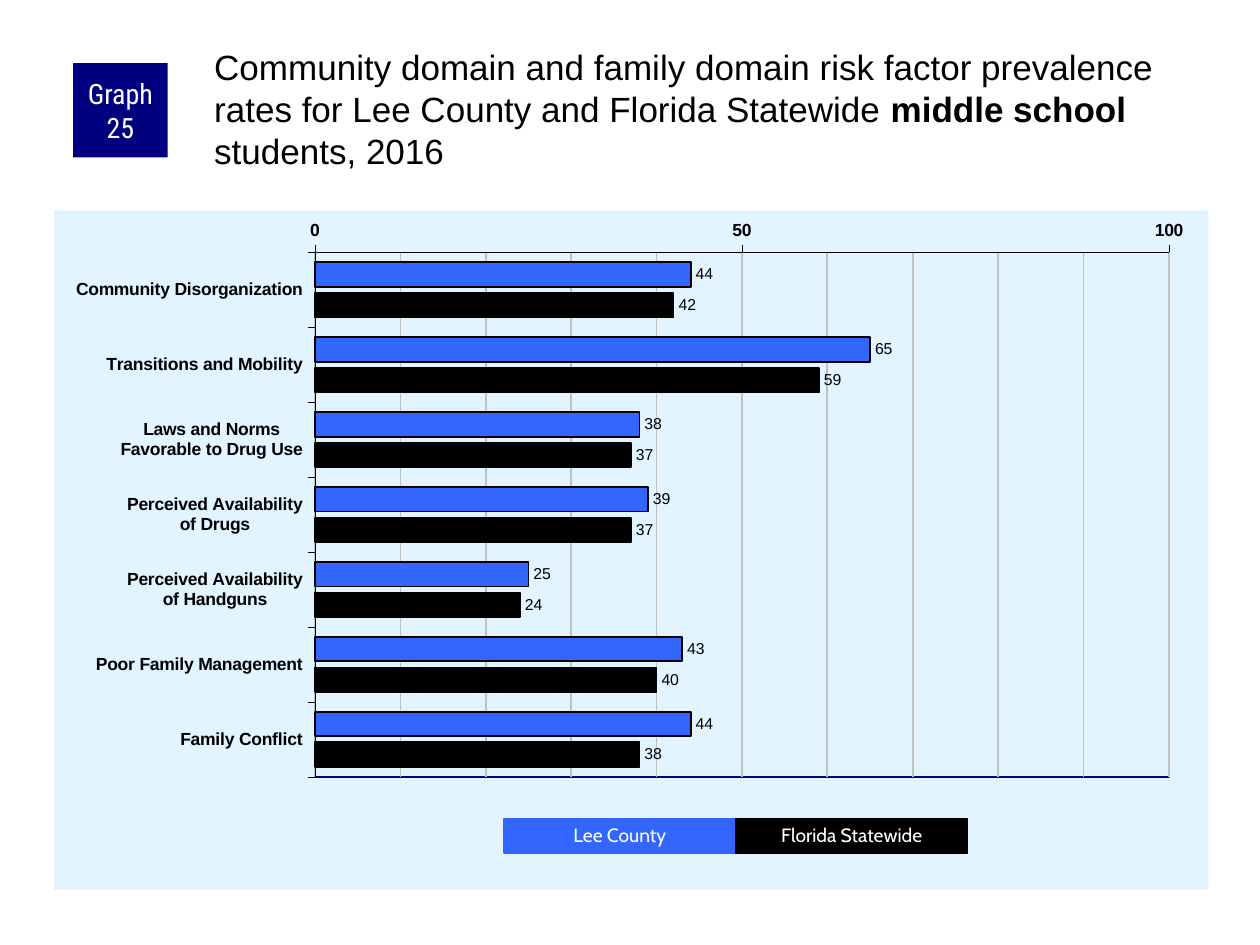
from dataclasses import dataclass

from lxml import etree
from pptx import Presentation
from pptx import util as u
from pptx.chart.data import CategoryChartData
from pptx.dml.color import RGBColor
from pptx.enum import chart as ec, shapes, text
from pptx.oxml import parse_xml
from pptx.oxml.ns import nsdecls, qn

COLORS = {"navy": "000080", "blue": "3366FF", "black": "000000",
          "white": "FFFFFF", "grid": "C0C0C0", "panel": "E1F4FF"}
CATEGORIES = ["Community Disorganization", "Transitions and Mobility",
              "Laws and Norms\nFavorable to Drug Use",
              "Perceived Availability\nof Drugs",
              "Perceived Availability\nof Handguns",
              "Poor Family Management", "Family Conflict"]
PLOT = {"x": 0.226, "y": 0.062, "w": 0.74, "h": 0.772}


@dataclass
class Region:
    name: str
    color: str
    rates: list[int]


REGIONS = [Region("Lee County", "blue", [44, 65, 38, 39, 25, 43, 44]),
           Region("Florida Statewide", "black", [42, 59, 37, 37, 24, 40, 38])]


def rgb(name: str) -> RGBColor:
    return RGBColor.from_string(COLORS[name])


def style_font(font, size: float, color: str = "black", face: str = "Arial",
               bold: bool = False) -> None:
    font.name, font.size, font.bold = face, u.Pt(size), bold
    font.color.rgb = rgb(color)


def add_run(p, content: str, **fmt) -> None:
    r = p.add_run()
    r.text = content
    style_font(r.font, **fmt)


def set_insets(tf, left: float, top: float, right: float, bottom: float) -> None:
    tf.margin_left, tf.margin_top = u.Inches(left), u.Inches(top)
    tf.margin_right, tf.margin_bottom = u.Inches(right), u.Inches(bottom)


def add_box(s, box: tuple, fill: str, content: str, line: bool = False,
            spacing: float = 1.0, insets: tuple = (0.1, 0.05, 0.1, 0.05), **fmt) -> None:
    sp = s.shapes.add_shape(shapes.MSO_SHAPE.RECTANGLE, *map(u.Inches, box))
    sp.shadow.inherit = False
    sp.fill.solid()
    sp.fill.fore_color.rgb = rgb(fill)
    if line:
        sp.line.color.rgb = rgb(fill)
        sp.line.width = u.Pt(0.75)
    else:
        sp.line.fill.background()
    tf = sp.text_frame
    tf.word_wrap = True
    tf.vertical_anchor = text.MSO_ANCHOR.MIDDLE
    set_insets(tf, *insets)
    p = tf.paragraphs[0]
    p.alignment = text.PP_ALIGN.CENTER
    p.line_spacing = spacing
    add_run(p, content, color="white", **fmt)


def add_title(s) -> None:
    sp = s.shapes.title
    sp.left, sp.top, sp.width, sp.height = map(u.Inches, (1.67, 0.33, 7.92, 0.83))
    tf = sp.text_frame
    tf.word_wrap = True
    tf.auto_size = text.MSO_AUTO_SIZE.NONE
    tf.vertical_anchor = text.MSO_ANCHOR.TOP
    set_insets(tf, 0.03, 0.03, 0, 0)
    p = tf.paragraphs[0]
    p.alignment = text.PP_ALIGN.LEFT
    add_run(p, "Community domain and family domain risk factor prevalence "
               "rates for Lee County and Florida Statewide ", size=20)
    add_run(p, "middle school", size=20, bold=True)
    add_run(p, " students, 2016", size=20)


def set_line(fmt, color: str, width: float) -> None:
    fmt.line.color.rgb = rgb(color)
    fmt.line.width = u.Pt(width)


def style_axis(axis) -> None:
    style_font(axis.tick_labels.font, 10, bold=True)
    set_line(axis.format, "black", 0.25)
    axis.major_tick_mark = ec.XL_TICK_MARK.OUTSIDE
    axis.minor_tick_mark = ec.XL_TICK_MARK.NONE


def style_areas(chart) -> None:
    cs = chart.element
    cs.find(qn("c:chart")).addnext(parse_xml(
        f'<c:spPr {nsdecls("c", "a")}><a:solidFill><a:srgbClr val="{COLORS["panel"]}"/>'
        '</a:solidFill><a:ln><a:noFill/></a:ln></c:spPr>'))
    area = cs.find(".//" + qn("c:plotArea"))
    for old in area.findall(qn("c:layout")):
        area.remove(old)
    layout = etree.Element(qn("c:layout"))
    manual = etree.SubElement(layout, qn("c:manualLayout"))
    settings = {"layoutTarget": "inner", "xMode": "edge", "yMode": "edge", **PLOT}
    for tag, val in settings.items():
        etree.SubElement(manual, qn("c:" + tag)).set("val", str(val))
    area.insert(0, layout)
    area.append(parse_xml(
        f'<c:spPr {nsdecls("c", "a")}><a:noFill/><a:ln w="12700"><a:solidFill>'
        f'<a:srgbClr val="{COLORS["navy"]}"/></a:solidFill></a:ln></c:spPr>'))


def add_rate_chart(s) -> None:
    data = CategoryChartData()
    data.categories = CATEGORIES
    for region in REGIONS:
        data.add_series(region.name, region.rates)
    chart = s.shapes.add_chart(ec.XL_CHART_TYPE.BAR_CLUSTERED,
                               *map(u.Inches, (0.43, 1.67, 9.16, 5.39)), data).chart
    chart.has_title = chart.has_legend = False
    style_font(chart.font, 11.8)
    plot = chart.plots[0]
    plot.gap_width, plot.overlap, plot.vary_by_categories = 80, -25, False
    for series, region in zip(plot.series, REGIONS):
        series.format.fill.solid()
        series.format.fill.fore_color.rgb = rgb(region.color)
        set_line(series.format, "black", 1)
        labels = series.data_labels
        labels.show_value = True
        labels.position = ec.XL_LABEL_POSITION.OUTSIDE_END
        style_font(labels.font, 9)

    cat, val = chart.category_axis, chart.value_axis
    style_axis(cat)
    style_axis(val)
    cat.reverse_order = True
    cat.crosses = ec.XL_AXIS_CROSSES.MAXIMUM
    val.minimum_scale, val.maximum_scale = 0, 100
    val.major_unit, val.minor_unit = 50, 10
    val.has_major_gridlines = val.has_minor_gridlines = True
    set_line(val.major_gridlines.format, "grid", 1)
    minor = val.major_gridlines.format.line._ln
    grid = chart.element.find(".//" + qn("c:minorGridlines"))
    etree.SubElement(grid, qn("c:spPr")).append(parse_xml(etree.tostring(minor)))
    style_areas(chart)


def main() -> None:
    prs = Presentation()
    prs.slide_width, prs.slide_height = u.Inches(10), u.Inches(7.5)
    s = prs.slides.add_slide(prs.slide_layouts[5])
    add_rate_chart(s)
    add_box(s, (0.58, 0.5, 0.75, 0.75), "navy", "Graph 25",
            insets=(0.05, 0, 0.05, 0), size=16, face="Roboto Condensed")
    add_title(s)
    for i, region in enumerate(REGIONS):
        add_box(s, (4 + i * 1.84, 6.5, 1.84, 0.27), region.color, region.name,
                line=True, spacing=0.9, size=11, face="Cabin")
    prs.save("out.pptx")


if __name__ == "__main__":
    main()
